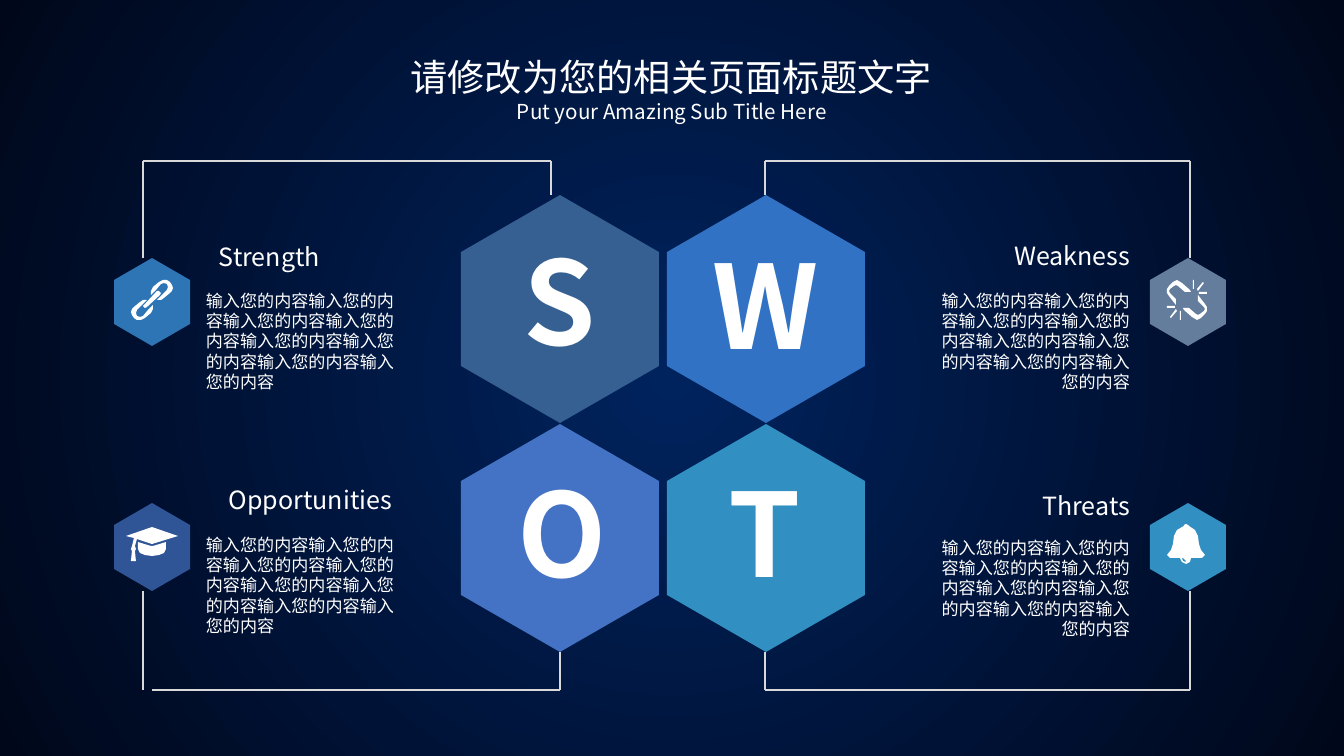
import pptx
import pptx.util
import pptx.dml.color
import pptx.enum.shapes
import pptx.enum.text
import pptx.oxml
import pptx.oxml.ns
import lxml.etree

PX = 914400 / 100.8
FONT = "Noto Sans CJK SC"
HUES = {
    "white": "FFFFFF", "rule": "D9D9D9", "core": "00235E", "edge": "00071A",
    "S": "376092", "W": "3172C4", "O": "4472C4", "T": "328FC1",
    "link": "2E75B6", "break": "657D9D", "cap": "2F5597", "bell": "328FC1",
}
NS = pptx.oxml.ns.nsdecls("a")
ALIGN = {name: getattr(pptx.enum.text.PP_ALIGN, name.upper())
         for name in ("left", "center", "right")}


def emu(*px):
    return [pptx.util.Emu(round(v * PX)) for v in px]


def hue(name):
    return pptx.dml.color.RGBColor.from_string(HUES[name])


def write(frame, text, size, align="left", bold=False, wrap=True, inset=True, grow=True):
    auto = pptx.enum.text.MSO_AUTO_SIZE
    frame.word_wrap = wrap
    frame.auto_size = auto.SHAPE_TO_FIT_TEXT if grow else auto.NONE
    frame.vertical_anchor = pptx.enum.text.MSO_ANCHOR.TOP
    if not inset:
        frame.margin_left = frame.margin_right = 0
        frame.margin_top = frame.margin_bottom = 0
    para = frame.paragraphs[0]
    para.alignment = ALIGN[align]
    run = para.add_run()
    run.text = text
    run.font.size = pptx.util.Pt(size)
    run.font.bold = bold
    run.font.name = FONT
    run.font.color.rgb = hue("white")
    east = lxml.etree.SubElement(run.font._element, pptx.oxml.ns.qn("a:ea"))
    east.set("typeface", FONT)


class Deck:
    def __init__(self, wide, high):
        self.file = pptx.Presentation()
        self.file.slide_width, self.file.slide_height = emu(wide, high)
        self.slide = self.file.slides.add_slide(self.file.slide_layouts[5])
        self.shapes = self.slide.shapes

    def glow(self, core, edge):
        fill = self.slide.background.fill
        fill.gradient()
        for stop, name in zip(fill.gradient_stops, (core, edge)):
            stop.color.rgb = hue(name)
        lin = self.slide._element.find(".//" + pptx.oxml.ns.qn("a:lin"))
        lin.getparent().replace(lin, pptx.oxml.parse_xml(
            f'<a:path {NS} path="circle">'
            '<a:fillToRect l="50000" t="50000" r="50000" b="50000"/></a:path>'))

    def title(self, box, text, **style):
        shape = self.shapes.title
        shape.left, shape.top, shape.width, shape.height = emu(*box)
        write(shape.text_frame, text, **style)

    def text(self, box, text, **style):
        write(self.shapes.add_textbox(*emu(*box)).text_frame, text, **style)

    def line(self, start, end):
        kind = pptx.enum.shapes.MSO_CONNECTOR.STRAIGHT
        rule = self.shapes.add_connector(kind, *emu(*start, *end))
        rule.line.color.rgb = hue("rule")
        rule.line.width = pptx.util.Pt(1)
        rule._element.spPr.append(pptx.oxml.parse_xml(f"<a:effectLst {NS}/>"))

    def shape(self, rings, fill):
        pen = self.shapes.build_freeform(*rings[0][0], scale=PX)
        pen.add_line_segments(rings[0][1:], close=True)
        for ring in rings[1:]:
            pen.move_to(*ring[0])
            pen.add_line_segments(ring[1:], close=True)
        form = pen.convert_to_shape()
        form.shadow.inherit = False
        form.fill.solid()
        form.fill.fore_color.rgb = hue(fill)
        form.line.fill.background()

    def hexagon(self, x, y, wide, high, fill):
        mid, right, low = x + wide / 2, x + wide, y + high
        up, down = y + high / 4, y + high * 3 / 4
        self.shape([[(mid, y), (right, up), (right, down),
                     (mid, low), (x, down), (x, up)]], fill)


def turn(rings, x, y):
    """Add each ring again, turned half way round a centre."""
    return rings + [[(2 * x - a, 2 * y - b) for a, b in ring] for ring in rings]


# Icon outlines
ICONS = {
    "link": turn([
        [(170, 293), (164, 298), (161, 300), (157, 300), (161, 296), (167, 290),
         (168, 287), (167, 284), (164, 283), (161, 284), (156, 290), (151, 295),
         (151, 291), (153, 287), (159, 282), (163, 280), (167, 280), (170, 282),
         (172, 285), (173, 288), (172, 291)]], 152, 300) + [
        [(147, 307), (145, 308), (143, 306), (144, 305), (157, 291), (159, 291),
         (161, 293), (160, 295)]],
    "break": turn([
        [(1185, 292), (1178, 286), (1176, 285), (1174, 286), (1170, 289),
         (1169, 291), (1170, 293), (1176, 299), (1176, 305), (1169, 296),
         (1167, 293), (1167, 289), (1169, 286), (1173, 282), (1177, 280),
         (1182, 283), (1190, 290), (1191, 292)],
        [(1167, 306), (1175, 306), (1175, 308), (1167, 308)],
        [(1176, 309), (1177, 311), (1171, 318), (1170, 317)],
        [(1180, 311), (1181, 311), (1181, 320), (1180, 320)]], 1187, 300),
    "cap": [
        [(178, 536), (152, 544), (137, 539), (135, 546), (136, 549), (135, 551),
         (136, 561), (131, 561), (132, 551), (131, 549), (132, 546), (134, 538),
         (126, 536), (152, 527)],
        [(166, 549), (164, 553), (159, 555), (152, 556), (145, 555), (140, 553),
         (138, 549), (138, 542), (151, 546), (153, 546), (166, 542)]],
    "bell": [
        [(1202, 558), (1191, 558), (1190, 562), (1186, 564), (1182, 562),
         (1180, 558), (1170, 558), (1167, 555), (1171, 550), (1173, 544),
         (1174, 536), (1177, 530), (1184, 526), (1184, 525), (1186, 524),
         (1188, 525), (1189, 526), (1195, 530), (1198, 536), (1199, 544),
         (1201, 550), (1205, 555)],
        [(1186, 561), (1183, 558), (1182, 558), (1183, 561), (1186, 562)]],
}

# Letter, column, row, letter box
LETTERS = [("S", 0, 0, (507, 225, 105, 151)), ("W", 1, 0, (695, 229, 142, 151)),
           ("O", 0, 1, (508, 457, 105, 151)), ("T", 1, 1, (712, 457, 105, 151))]

# Icon, column, row, heading, heading box, body top, outer x, corner x, inner x
PANELS = [
    ("cap", 0, 1, "Opportunities", (219, 480, 188, 40), 529, 143, 152, 560),
    ("bell", 1, 1, "Threats", (1030, 486, 110, 40), 532, 1190, 1190, 765),
    ("break", 1, 0, "Weakness", (999, 236, 141, 40), 285, 1190, 1190, 765),
    ("link", 0, 0, "Strength", (209, 237, 125, 40), 285, 143, 143, 551),
]
BODY = "输入您的内容" * 8


def main():
    deck = Deck(1344, 756)
    deck.glow("core", "edge")

    # Centre hexagons
    for mark, col, row, box in LETTERS:
        deck.hexagon(461 + 206 * col, 195 + 229 * row, 198, 228, mark)
        deck.text(box, mark, size=82.8, align="center", bold=True)

    # Side panels
    for icon, col, row, head, box, top, outer, corner, inner in PANELS:
        align = ("left", "right")[col]
        deck.hexagon(114 + 1036 * col, (258, 503)[row], 76, 88, icon)
        deck.text(box, head, size=17.9, align=align, wrap=False)
        deck.text((196 + 727 * col, top, 217, 113), BODY, size=12.2, align=align)
        knee, near, far = ((161, 258, 195), (690, 591, 652))[row]
        deck.line((inner, knee), (corner, knee))
        deck.line((outer, near), (outer, knee))
        deck.line((inner, far), (inner, knee))
        deck.shape(ICONS[icon], "white")

    # Title and subtitle
    deck.title((275, 54, 793, 45), "请修改为您的相关页面标题文字",
               size=26.6, align="center", inset=False, grow=False)
    deck.text((390, 99, 564, 25), "Put your Amazing Sub Title Here",
              size=14.7, align="center", inset=False)

    deck.file.save("out.pptx")


if __name__ == "__main__":
    main()
